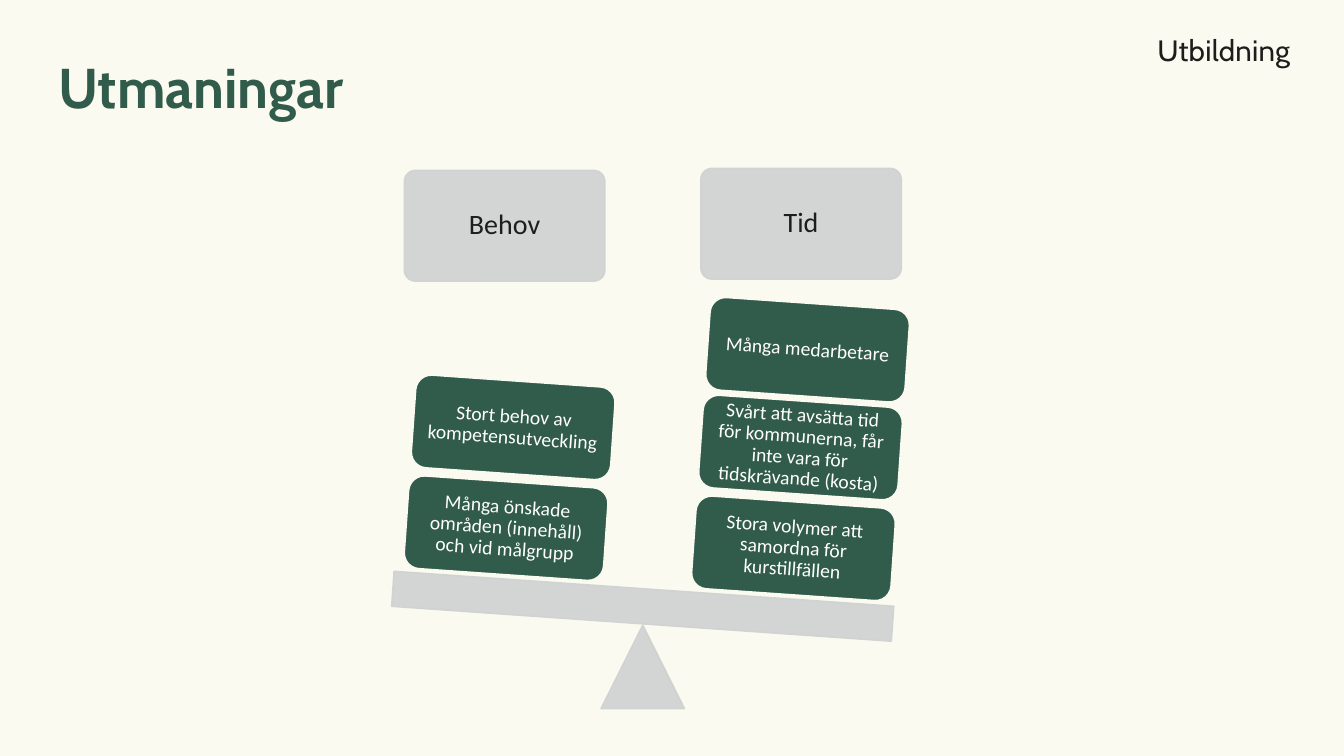
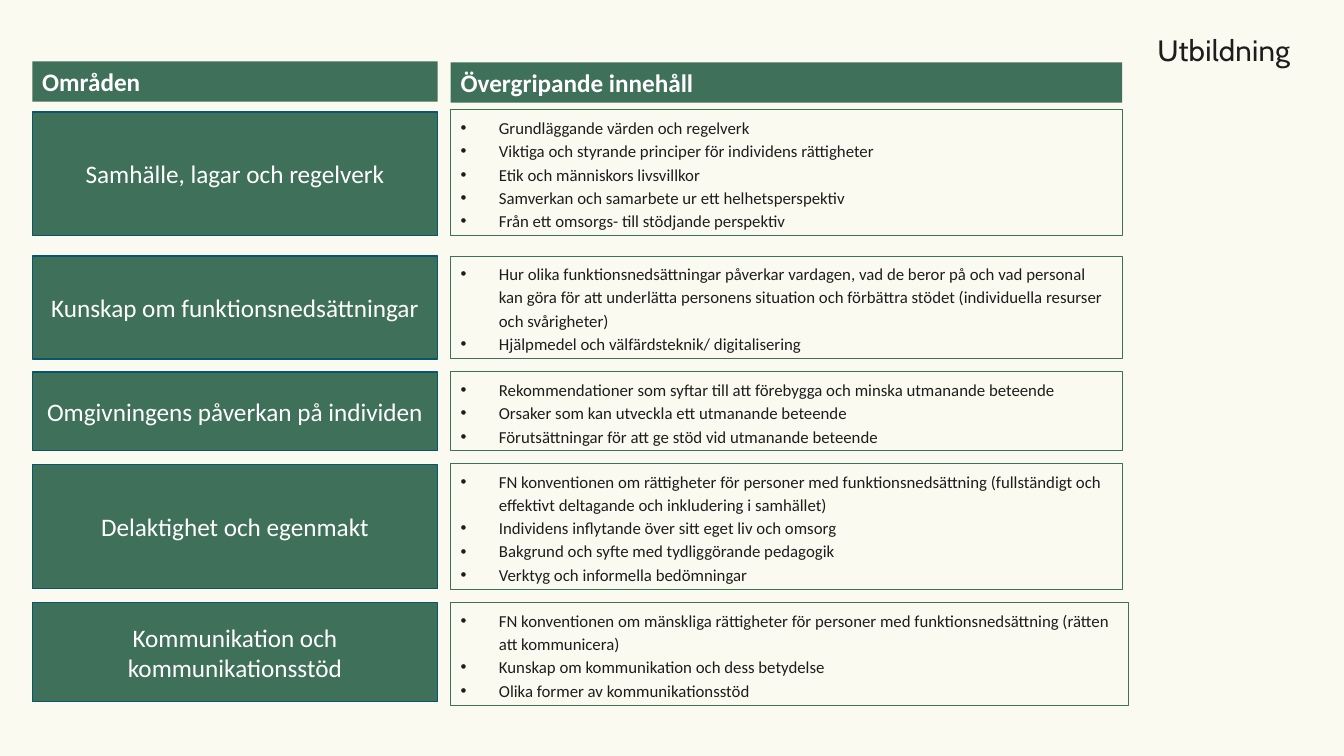
from dataclasses import dataclass

from lxml.etree import SubElement
from pptx import Presentation
from pptx.dml.color import RGBColor
from pptx.enum.shapes import MSO_SHAPE as Shape
from pptx.enum.text import MSO_ANCHOR as Anchor, PP_ALIGN as Align
from pptx.oxml.ns import qn
from pptx.util import Inches, Pt

COLORS = {
    "background": "FBFAF0",
    "ink": "1D1D1D",
    "white": "FFFFFF",
    "dark green": "315B4A",
    "green": "3F7059",
    "gray": "CED2D0",
    "blue": "09556D",
}
BODY = {"name": "Calibri"}
TITLE = {"name": "Cabin", "size": Pt(40), "bold": True}
BRAND = {"name": "Cabin", "size": Pt(21)}
HEADING = {**BODY, "size": Pt(18), "bold": True}
AREA = {**BODY, "size": Pt(18)}
CONTENT = {**BODY, "size": Pt(12)}
PAN = {**BODY, "size": Pt(20)}
WEIGHT = {**BODY, "size": Pt(14)}

CENTERED = {"alignment": Align.CENTER}
TIGHT = {"alignment": Align.CENTER, "line_spacing": 0.9}
TILT = 4
WEIGHT_SHIFT = 0.07


@dataclass
class Box:
    left: float
    top: float
    width: float
    height: float

    def lengths(self) -> list:
        return [Inches(value) for value in (self.left, self.top, self.width, self.height)]


@dataclass
class Stack:
    heading: str
    heading_box: Box
    left: float
    tops: list[float]
    weights: list[str]


@dataclass
class Area:
    name: str
    label: Box
    content: Box
    points: list[str]


LABEL_LEFT, LABEL_WIDTH = 0.32, 4.02
CONTENT_LEFT, CONTENT_WIDTH = 4.47, 6.66

STACKS = [
    Stack("Behov", Box(4.01, 1.69, 1.99, 1.1), 4.03, [4.78, 3.78], [
        "Många önskade områden (innehåll) och vid målgrupp",
        "Stort behov av kompetensutveckling",
    ]),
    Stack("Tid", Box(6.95, 1.67, 1.99, 1.1), 6.88, [4.98, 3.98, 3.01], [
        "Stora volymer att samordna för kurstillfällen",
        "Svårt att avsätta tid för kommunerna, får inte vara för tidskrävande (kosta)",
        "Många medarbetare",
    ]),
]


def label_box(top: float, height: float) -> Box:
    return Box(LABEL_LEFT, top, LABEL_WIDTH, height)


def content_box(top: float, height: float, width: float = CONTENT_WIDTH) -> Box:
    return Box(CONTENT_LEFT, top, width, height)


HEADINGS = {
    "Områden": label_box(0.61, 0.4),
    "Övergripande innehåll": content_box(0.62, 0.4),
}
AREAS = [
    Area("Samhälle, lagar och regelverk", label_box(1.11, 1.23), content_box(1.09, 1.25), [
        "Grundläggande värden och regelverk",
        "Viktiga och styrande principer för individens rättigheter",
        "Etik och människors livsvillkor",
        "Samverkan och samarbete ur ett helhetsperspektiv",
        "Från ett omsorgs- till stödjande perspektiv",
    ]),
    Area("Kunskap om funktionsnedsättningar", label_box(2.54, 1.02), content_box(2.54, 1.02), [
        "Hur olika funktionsnedsättningar påverkar vardagen, vad de beror på och vad personal "
        "kan göra för att underlätta personens situation och förbättra stödet "
        "(individuella resurser och svårigheter)",
        "Hjälpmedel och välfärdsteknik/ digitalisering",
    ]),
    Area("Omgivningens påverkan på individen", label_box(3.69, 0.78), content_box(3.69, 0.78), [
        "Rekommendationer som syftar till att förebygga och minska utmanande beteende",
        "Orsaker som kan utveckla ett utmanande beteende",
        "Förutsättningar för att ge stöd vid utmanande beteende",
    ]),
    Area("Delaktighet och egenmakt", label_box(4.61, 1.23), content_box(4.6, 1.25), [
        "FN konventionen om rättigheter för personer med funktionsnedsättning "
        "(fullständigt och effektivt deltagande och inkludering i samhället)",
        "Individens inflytande över sitt eget liv och omsorg",
        "Bakgrund och syfte med tydliggörande pedagogik",
        "Verktyg och informella bedömningar",
    ]),
    Area("Kommunikation och kommunikationsstöd", label_box(5.98, 0.98), content_box(5.98, 1.02, 6.72), [
        "FN konventionen om mänskliga rättigheter för personer med funktionsnedsättning "
        "(rätten att kommunicera)",
        "Kunskap om kommunikation och dess betydelse",
        "Olika former av kommunikationsstöd",
    ]),
]


def rgb(color: str) -> RGBColor:
    return RGBColor.from_string(COLORS[color])


def set_all(target, values: dict) -> None:
    for name, value in values.items():
        setattr(target, name, value)


def write(shape, lines: list[str], font: dict, color: str, layout: dict | None = None,
          anchor=Anchor.TOP) -> None:
    frame = shape.text_frame
    set_all(frame, {"word_wrap": True, "vertical_anchor": anchor})
    for index, line in enumerate(lines):
        paragraph = frame.add_paragraph() if index else frame.paragraphs[0]
        set_all(paragraph, {"alignment": Align.LEFT, **(layout or {})})
        run = paragraph.add_run()
        run.text = line
        set_all(run.font, font)
        run.font.color.rgb = rgb(color)


def draw(slide, kind, box: Box, fill: str | None = None, line: str | None = None,
         line_width: float = 1, rotation: float = 0):
    shape = slide.shapes.add_shape(kind, *box.lengths())
    shape.shadow.inherit = False
    shape.rotation = rotation
    if fill:
        shape.fill.solid()
        shape.fill.fore_color.rgb = rgb(fill)
    else:
        shape.fill.background()
    if line:
        shape.line.color.rgb = rgb(line)
        shape.line.width = Pt(line_width)
    else:
        shape.line.fill.background()
    return shape


def draw_gray(slide, kind, box: Box, rotation: float = 0):
    shape = draw(slide, kind, box, "gray", "gray", rotation=rotation)
    for color in shape._element.spPr.iter(qn("a:srgbClr")):
        SubElement(color, qn("a:alpha"), val="90000")
    return shape


def add_bullets(shape) -> None:
    for paragraph in shape.text_frame.paragraphs:
        properties = paragraph._p.get_or_add_pPr()
        properties.set("marL", str(Inches(0.38)))
        properties.set("indent", str(-Inches(0.38)))
        SubElement(properties, qn("a:buFont"), typeface="Arial")
        SubElement(properties, qn("a:buChar"), char="•")


def add_slide(presentation):
    slide = presentation.slides.add_slide(presentation.slide_layouts[6])
    brand = slide.shapes.add_textbox(*Box(11.38, 0.27, 1.87, 0.47).lengths())
    write(brand, ["Utbildning"], BRAND, "ink")
    brand.text_frame.paragraphs[0].runs[0].font._element.set("spc", "20")
    return slide


def build_challenges(presentation) -> None:
    slide = add_slide(presentation)
    title = slide.shapes.add_textbox(*Box(0.48, 0.6, 8.23, 1.11).lengths())
    title.text_frame.margin_top = 0
    write(title, ["Utmaningar"], TITLE, "dark green", {"line_spacing": 0.9})

    draw_gray(slide, Shape.ISOSCELES_TRIANGLE, Box(5.96, 6.2, 0.83, 0.83))
    draw_gray(slide, Shape.RECTANGLE, Box(3.89, 5.84, 4.97, 0.35), TILT)
    for stack in STACKS:
        pan = draw_gray(slide, Shape.ROUNDED_RECTANGLE, stack.heading_box)
        pan.adjustments[0] = 0.1
        write(pan, [stack.heading], PAN, "ink", TIGHT, Anchor.MIDDLE)
        for index, (top, text) in enumerate(zip(stack.tops, stack.weights)):
            box = Box(stack.left + index * WEIGHT_SHIFT, top, 1.98, 0.92)
            weight = draw(slide, Shape.ROUNDED_RECTANGLE, box, "dark green", "background",
                          rotation=TILT)
            set_all(weight.text_frame, {
                "margin_left": Inches(0.06), "margin_right": Inches(0.06),
                "margin_top": 0, "margin_bottom": 0,
            })
            write(weight, [text], WEIGHT, "white", TIGHT, Anchor.MIDDLE)


def build_areas(presentation) -> None:
    slide = add_slide(presentation)
    for heading, box in HEADINGS.items():
        band = draw(slide, Shape.RECTANGLE, box, "green")
        write(band, [heading], HEADING, "white")
    for area in AREAS:
        label = draw(slide, Shape.RECTANGLE, area.label, "green", "blue")
        write(label, [area.name], AREA, "white", CENTERED, Anchor.MIDDLE)
        content = draw(slide, Shape.RECTANGLE, area.content, line="green", line_width=0.75)
        write(content, area.points, CONTENT, "ink", {"line_spacing": 1.15})
        add_bullets(content)


def main() -> None:
    presentation = Presentation()
    presentation.slide_width = Inches(13.33)
    presentation.slide_height = Inches(7.5)
    background = presentation.slide_master.background.fill
    background.solid()
    background.fore_color.rgb = rgb("background")
    build_challenges(presentation)
    build_areas(presentation)
    presentation.save("out.pptx")


if __name__ == "__main__":
    main()
